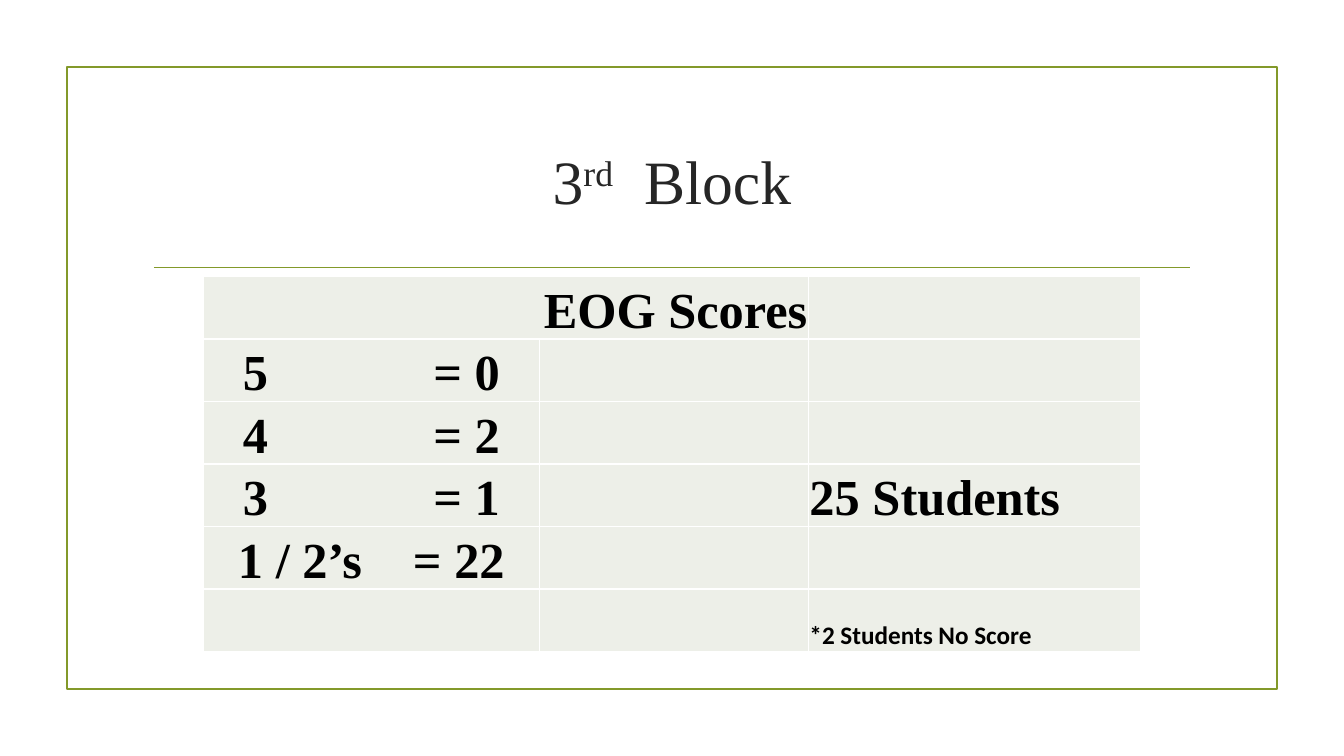
import pptx
import pptx.dml.color
import pptx.enum.shapes
import pptx.enum.text
import pptx.oxml
import pptx.oxml.ns
import pptx.util

Pt = pptx.util.Pt
RGBColor = pptx.dml.color.RGBColor
Align = pptx.enum.text.PP_ALIGN
Anchor = pptx.enum.text.MSO_ANCHOR

GREEN = RGBColor(0x83, 0x99, 0x2A)
CHARCOAL = RGBColor(0x26, 0x26, 0x26)
BLACK = RGBColor(0x00, 0x00, 0x00)
WHITE = RGBColor(0xFF, 0xFF, 0xFF)
CELL_GREY = RGBColor(0xED, 0xEF, 0xE8)
SERIF = "Times New Roman"
SANS = "Calibri"
NAMESPACE = pptx.oxml.ns.nsdecls("a")

COLUMN_WIDTHS = (240, 192, 237)
ROW_COUNT = 6
# label, count, left margin of the label, tab stop of the count
SCORES = (
    ("5", "= 0", 28, 136),
    ("4", "= 2", 28, 136),
    ("3", "= 1", 28, 136),
    ("1 / 2’s", "= 22", 24.5, 125),
)


def add_run(para, text, size, color, name=SERIF, bold=False):
    span = para.add_run()
    span.text = text
    span.font.size = Pt(size)
    span.font.name = name
    span.font.bold = bold
    span.font.color.rgb = color
    return span


def add_frame(page, left, top, width, height):
    """Draw the page border and the rule under the title."""
    border = page.shapes.add_shape(
        pptx.enum.shapes.MSO_SHAPE.RECTANGLE, Pt(left), Pt(top), Pt(width), Pt(height))
    border.shadow.inherit = False
    border.fill.background()
    rule = page.shapes.add_connector(
        pptx.enum.shapes.MSO_CONNECTOR.STRAIGHT,
        Pt(left + 62), Pt(top + 143), Pt(left + width - 62), Pt(top + 143))
    rule._element.spPr.append(pptx.oxml.parse_xml(f"<a:effectLst {NAMESPACE}/>"))
    for shape in (border, rule):
        shape.line.color.rgb = GREEN
        shape.line.width = Pt(1.25)


def add_title(page, left, top, width, height):
    title = page.shapes.title
    title.left, title.top, title.width, title.height = map(Pt, (left, top, width, height))
    title.text_frame.vertical_anchor = Anchor.MIDDLE
    para = title.text_frame.paragraphs[0]
    para.alignment = Align.CENTER
    add_run(para, "3", 44, CHARCOAL)
    ordinal = add_run(para, "rd", 44, CHARCOAL)
    ordinal._r.get_or_add_rPr().set("baseline", "30000")
    gap = add_run(para, " ", 44, CHARCOAL)
    gap._r.get_or_add_rPr().set("spc", "1100")
    add_run(para, "Block", 44, CHARCOAL)


def style_cell(cell):
    properties = cell._tc.get_or_add_tcPr()
    for side in ("lnL", "lnR", "lnT", "lnB"):
        properties.append(pptx.oxml.parse_xml(
            f'<a:{side} {NAMESPACE} w="12700"><a:solidFill>'
            f'<a:srgbClr val="{WHITE}"/></a:solidFill></a:{side}>'))
    cell.fill.solid()
    cell.fill.fore_color.rgb = CELL_GREY
    cell.vertical_anchor = Anchor.BOTTOM
    cell.margin_left = cell.margin_right = cell.margin_top = Pt(0.75)
    cell.margin_bottom = 0


def add_score(cell, label, count, margin, tab):
    cell.margin_left = Pt(margin)
    para = cell.text_frame.paragraphs[0]
    para.alignment = Align.LEFT
    para._p.get_or_add_pPr().append(pptx.oxml.parse_xml(
        f'<a:tabLst {NAMESPACE}><a:tab pos="{int(Pt(tab))}" algn="l"/></a:tabLst>'))
    add_run(para, f"{label}\t{count}", 36, BLACK, bold=True)


def add_score_table(page, left, top, width, height):
    table = page.shapes.add_table(
        ROW_COUNT, len(COLUMN_WIDTHS), Pt(left), Pt(top), Pt(width), Pt(height)).table
    table.first_row = table.horz_banding = False
    for column, column_width in zip(table.columns, COLUMN_WIDTHS):
        column.width = Pt(column_width)
    for row in table.rows:
        row.height = Pt(height / ROW_COUNT)
    for cell in table.iter_cells():
        style_cell(cell)

    table.cell(0, 0).merge(table.cell(0, 1))
    heading = table.cell(0, 0).text_frame.paragraphs[0]
    heading.alignment = Align.RIGHT
    add_run(heading, "EOG Scores", 36, BLACK, bold=True)
    for row_index, score in enumerate(SCORES, start=1):
        add_score(table.cell(row_index, 0), *score)
    total = table.cell(3, 2).text_frame.paragraphs[0]
    add_run(total, "25 Students", 36, BLACK, bold=True)
    footnote = table.cell(5, 2).text_frame.paragraphs[0]
    add_run(footnote, "*2 Students No Score", 18, BLACK, SANS, bold=True)


def main():
    deck = pptx.Presentation()
    deck.slide_width, deck.slide_height = Pt(960), Pt(540)
    page = deck.slides.add_slide(deck.slide_layouts[5])
    add_frame(page, 48, 48, 864, 444)
    add_title(page, 102, 77, 756, 103)
    add_score_table(page, 145.5, 197.5, sum(COLUMN_WIDTHS), 268)
    deck.save("out.pptx")


if __name__ == "__main__":
    main()
